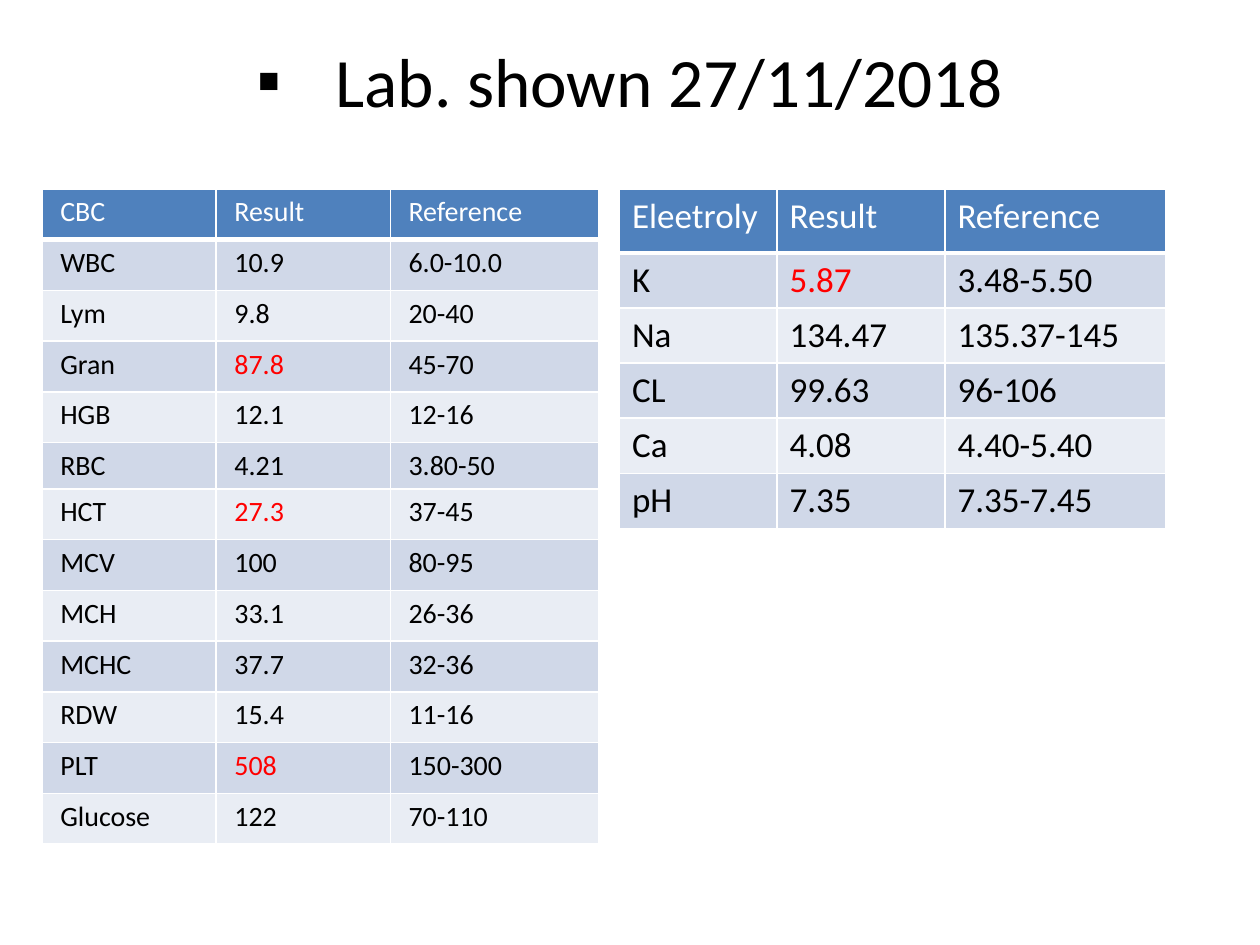
"""Build the laboratory results slide with its two result tables."""
from dataclasses import dataclass

from lxml.etree import SubElement
from pptx import Presentation
from pptx.dml.color import RGBColor
from pptx.enum.text import MSO_ANCHOR as Anchor, PP_ALIGN as Align
from pptx.oxml.ns import qn
from pptx.util import Pt

FONT = "Calibri"
BLACK = RGBColor(0x00, 0x00, 0x00)
WHITE = RGBColor(0xFF, 0xFF, 0xFF)
RED = RGBColor(0xFF, 0x00, 0x00)
HEADER_BLUE = RGBColor(0x4F, 0x81, 0xBD)
BANDS = (RGBColor(0xD0, 0xD8, 0xE8), RGBColor(0xE9, 0xED, 0xF4))


@dataclass(frozen=True)
class LabPanel:
    left: float
    top: float
    widths: tuple[float, ...]
    heights: tuple[float, ...]
    size: float
    side_inset: float
    rows: tuple[tuple[str, ...], ...]
    abnormal: frozenset[str]


CBC = LabPanel(
    left=24, top=108, widths=(99.5, 99.5, 119),
    heights=(29,) * 5 + (24,) + (29,) * 7,
    size=16, side_inset=10.5,
    rows=(
        ("CBC", "Result", "Reference"),
        ("WBC", "10.9", "6.0-10.0"),
        ("Lym", "9.8", "20-40"),
        ("Gran", "87.8", "45-70"),
        ("HGB", "12.1", "12-16"),
        ("RBC", "4.21", "3.80-50"),
        ("HCT", "27.3", "37-45"),
        ("MCV", "100", "80-95"),
        ("MCH", "33.1", "26-36"),
        ("MCHC", "37.7", "32-36"),
        ("RDW", "15.4", "11-16"),
        ("PLT", "508", "150-300"),
        ("Glucose", "122", "70-110"),
    ),
    abnormal=frozenset({"87.8", "27.3", "508"}),
)
ELECTROLYTES = LabPanel(
    left=354, top=108, widths=(90, 96, 126),
    heights=(36.5,) + (31.5,) * 5,
    size=20, side_inset=7.2,
    rows=(
        ("Eleetroly", "Result", "Reference"),
        ("K", "5.87", "3.48-5.50"),
        ("Na", "134.47", "135.37-145"),
        ("CL", "99.63", "96-106"),
        ("Ca", "4.08", "4.40-5.40"),
        ("pH", "7.35", "7.35-7.45"),
    ),
    abnormal=frozenset({"5.87"}),
)


def write(frame, text: str, *, size: float, color: RGBColor, align=Align.LEFT):
    """Write one formatted paragraph into a text frame and return it."""
    paragraph = frame.paragraphs[0]
    paragraph.alignment = align
    run = paragraph.add_run()
    run.text = text
    run.font.name = FONT
    run.font.size = Pt(size)
    run.font.bold = False
    run.font.color.rgb = color
    return paragraph


def add_bullet(paragraph, symbol: str, hang: float) -> None:
    """Give a paragraph a hanging bullet."""
    properties = paragraph._p.get_or_add_pPr()
    properties.set("marL", str(Pt(hang)))
    properties.set("indent", str(-Pt(hang)))
    SubElement(properties, qn("a:buFont"), typeface="Arial")
    SubElement(properties, qn("a:buChar"), char=symbol)


def add_borders(cell, color: RGBColor, bottom: float) -> None:
    """Rule a cell with thin sides and a bottom line of the given width."""
    properties = cell._tc.get_or_add_tcPr()
    for side, width in (("L", 1), ("R", 1), ("T", 1), ("B", bottom)):
        line = SubElement(properties, qn(f"a:ln{side}"), w=str(Pt(width)))
        SubElement(SubElement(line, qn("a:solidFill")), qn("a:srgbClr"), val=str(color))


def draw_title(slide, text: str) -> None:
    """Draw the bulleted title line."""
    frame = slide.shapes.add_textbox(Pt(36), Pt(21.6), Pt(648), Pt(90)).text_frame
    frame.word_wrap = True
    frame.vertical_anchor = Anchor.TOP
    frame.margin_top = 0
    title = write(frame, text, size=39.6, color=BLACK, align=Align.CENTER)
    add_bullet(title, "▪", 45)


def draw_panel(slide, panel: LabPanel) -> None:
    """Draw one panel of results as a banded table."""
    table = slide.shapes.add_table(
        len(panel.rows), len(panel.widths), Pt(panel.left), Pt(panel.top),
        Pt(sum(panel.widths)), Pt(sum(panel.heights))).table
    for column, width in zip(table.columns, panel.widths):
        column.width = Pt(width)
    for row, height in zip(table.rows, panel.heights):
        row.height = Pt(height)
    for r, values in enumerate(panel.rows):
        is_header = r == 0
        for c, value in enumerate(values):
            cell = table.cell(r, c)
            cell.margin_left = cell.margin_right = Pt(panel.side_inset)
            cell.margin_top = cell.margin_bottom = Pt(3.6)
            add_borders(cell, WHITE, bottom=3 if is_header else 1)
            cell.fill.solid()
            cell.fill.fore_color.rgb = HEADER_BLUE if is_header else BANDS[(r - 1) % 2]
            ink = WHITE if is_header else RED if value in panel.abnormal else BLACK
            write(cell.text_frame, value, size=panel.size, color=ink)


def main() -> None:
    """Build and save the slide."""
    deck = Presentation()
    deck.slide_width, deck.slide_height = Pt(720), Pt(540)
    slide = deck.slides.add_slide(deck.slide_layouts[6])
    draw_title(slide, "Lab. shown 27/11/2018")
    for panel in (CBC, ELECTROLYTES):
        draw_panel(slide, panel)
    deck.save("out.pptx")


if __name__ == "__main__":
    main()
